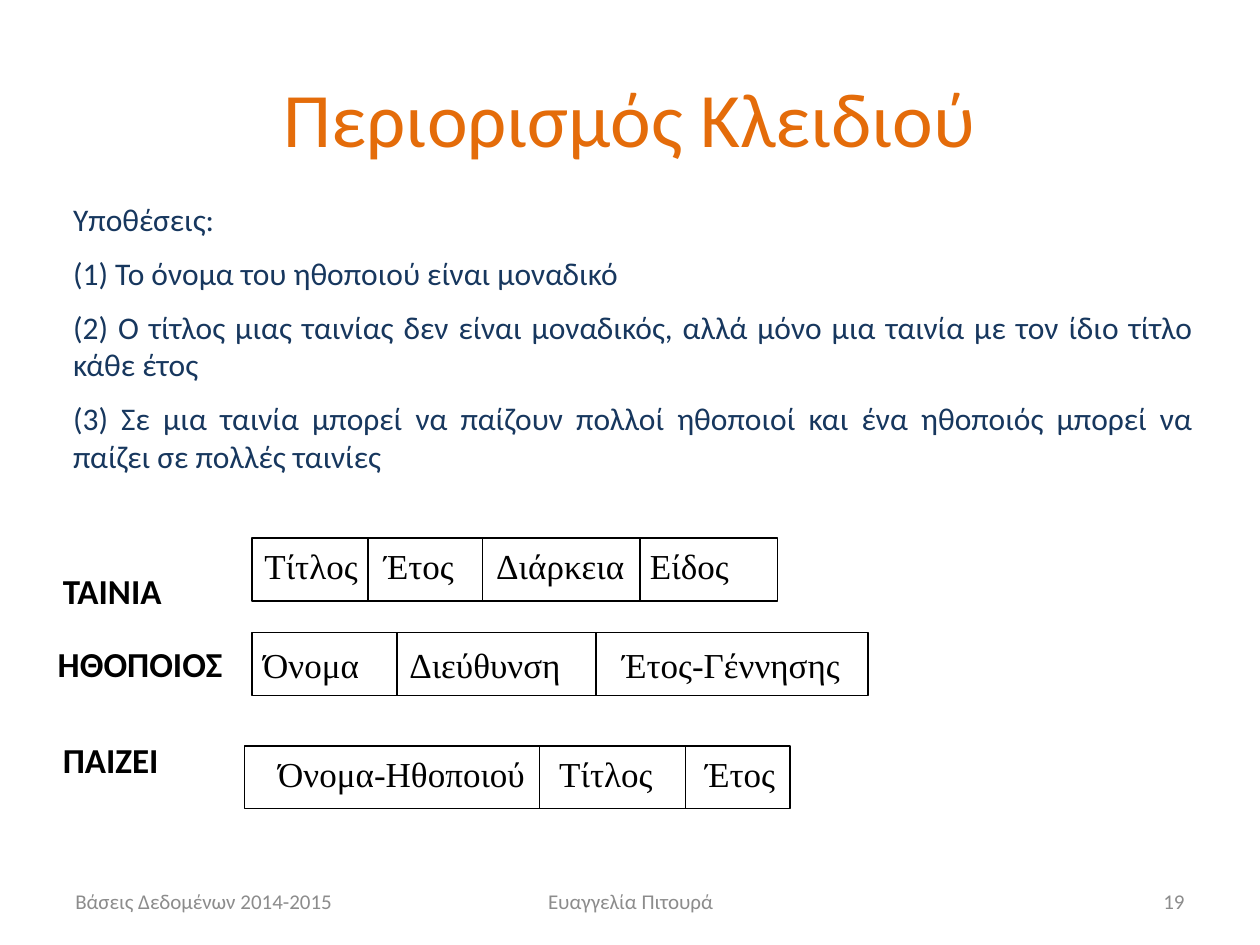
from dataclasses import dataclass

from lxml import etree
from pptx import Presentation
from pptx.dml.color import RGBColor
from pptx.enum.shapes import MSO_CONNECTOR, MSO_SHAPE
from pptx.enum.text import MSO_ANCHOR, MSO_AUTO_SIZE, PP_ALIGN
from pptx.oxml.ns import qn
from pptx.util import Inches, Pt

LEFT, CENTER, RIGHT, JUSTIFY = PP_ALIGN.LEFT, PP_ALIGN.CENTER, PP_ALIGN.RIGHT, PP_ALIGN.JUSTIFY
TOP, MIDDLE = MSO_ANCHOR.TOP, MSO_ANCHOR.MIDDLE
NO_AUTOFIT = MSO_AUTO_SIZE.NONE
RECTANGLE, STRAIGHT = MSO_SHAPE.RECTANGLE, MSO_CONNECTOR.STRAIGHT


@dataclass(frozen=True)
class Theme:
    sans: str = "Calibri"
    serif: str = "Times New Roman"
    title: RGBColor = RGBColor(0xE4, 0x6C, 0x0A)
    body: RGBColor = RGBColor(0x17, 0x37, 0x5E)
    ink: RGBColor = RGBColor(0, 0, 0)
    footer: RGBColor = RGBColor(0x8C, 0x8C, 0x8C)
    title_size: Pt = Pt(44)
    body_size: Pt = Pt(18)
    relation_size: Pt = Pt(20)
    footer_size: Pt = Pt(12)
    gap: Pt = Pt(9)
    rule: Pt = Pt(0.75)


theme = Theme()


def write(text, at, size, color, font=theme.sans, bold=False, align=LEFT,
          anchor=TOP, gap=Pt(0), holder=None):
    box = [Inches(length) for length in at]
    if holder is None:
        holder = slide.shapes.add_textbox(*box)
    else:
        holder.left, holder.top, holder.width, holder.height = box
    frame = holder.text_frame
    frame.text = text
    frame.word_wrap = True
    frame.auto_size = NO_AUTOFIT
    frame.vertical_anchor = anchor
    for index, paragraph in enumerate(frame.paragraphs):
        paragraph.alignment = align
        paragraph.space_before = gap if index else Pt(0)
        properties = paragraph._p.get_or_add_pPr()
        properties.set("marL", "0")
        properties.set("indent", "0")
        etree.SubElement(properties, qn("a:buNone"))
        for run in paragraph.runs:
            run.font.size, run.font.name, run.font.bold = size, font, bold
            run.font.color.rgb = color


presentation = Presentation()
presentation.slide_width, presentation.slide_height = Inches(10), Inches(7.5)
slide = presentation.slides.add_slide(presentation.slide_layouts[1])

write("Περιορισμός Κλειδιού", (0.5, 0.3, 9, 1.25), theme.title_size, theme.title,
      align=CENTER, anchor=MIDDLE, holder=slide.shapes.title)

assumptions = [
    "Υποθέσεις:",
    "(1) Το όνομα του ηθοποιού είναι μοναδικό",
    "(2) Ο τίτλος μιας ταινίας δεν είναι μοναδικός, αλλά μόνο μια ταινία με τον ίδιο τίτλο κάθε έτος",
    "(3) Σε μια ταινία μπορεί να παίζουν πολλοί ηθοποιοί και ένα ηθοποιός μπορεί να παίζει σε πολλές ταινίες",
]
write("\n".join(assumptions), (0.48, 1.54, 9.09, 2.37), theme.body_size, theme.body,
      align=JUSTIFY, gap=theme.gap, holder=slide.placeholders[1])

relations = [
    ("ΤΑΙΝΙΑ", (0.4, 4.47), 4.27, 4.27, (2, 2.92, 3.83, 5.08, 6.17),
     [("Τίτλος", 2), ("Έτος", 2.95), ("Διάρκεια", 3.84), ("Είδος", 5.06)]),
    ("ΗΘΟΠΟΙΟΣ", (0.36, 5.05), 5.02, 5.06, (2, 3.15, 4.73, 6.89),
     [("Όνομα", 1.99), ("Διεύθυνση", 3.15), ("Έτος-Γέννησης", 4.84)]),
    ("ΠΑΙΖΕΙ", (0.4, 5.81), 5.92, 5.92, (1.94, 4.28, 5.44, 6.27),
     [("Όνομα-Ηθοποιού", 2.11), ("Τίτλος", 4.34), ("Έτος", 5.5)]),
]
row_height, text_height, inset = 0.5, 0.43, 0.1
for name, name_at, top, text_top, edges, fields in relations:
    write(name, (*name_at, 1.6, text_height), theme.relation_size, theme.ink, bold=True)
    border = slide.shapes.add_shape(RECTANGLE, Inches(edges[0]), Inches(top),
                                    Inches(edges[-1] - edges[0]), Inches(row_height))
    border.shadow.inherit = False
    border.fill.background()
    border.line.color.rgb = theme.ink
    border.line.width = theme.rule
    for edge in edges[1:-1]:
        divider = slide.shapes.add_connector(STRAIGHT, Inches(edge), Inches(top),
                                             Inches(edge), Inches(top + row_height))
        divider.line.color.rgb = theme.ink
        divider.line.width = theme.rule
        etree.SubElement(divider._element.spPr, qn("a:effectLst"))
    for (field, left), right in zip(fields, edges[1:]):
        write(field, (left, text_top, right + inset - left, text_height),
              theme.relation_size, theme.ink, font=theme.serif)

footers = [
    ("Βάσεις Δεδομένων 2014-2015", 0.5, 2.33, LEFT),
    ("Ευαγγελία Πιτουρά", 3.42, 3.17, CENTER),
    ("19", 7.17, 2.33, RIGHT),
]
for text, left, width, align in footers:
    write(text, (left, 6.95, width, 0.4), theme.footer_size, theme.footer,
          align=align, anchor=MIDDLE)

presentation.save("out.pptx")
